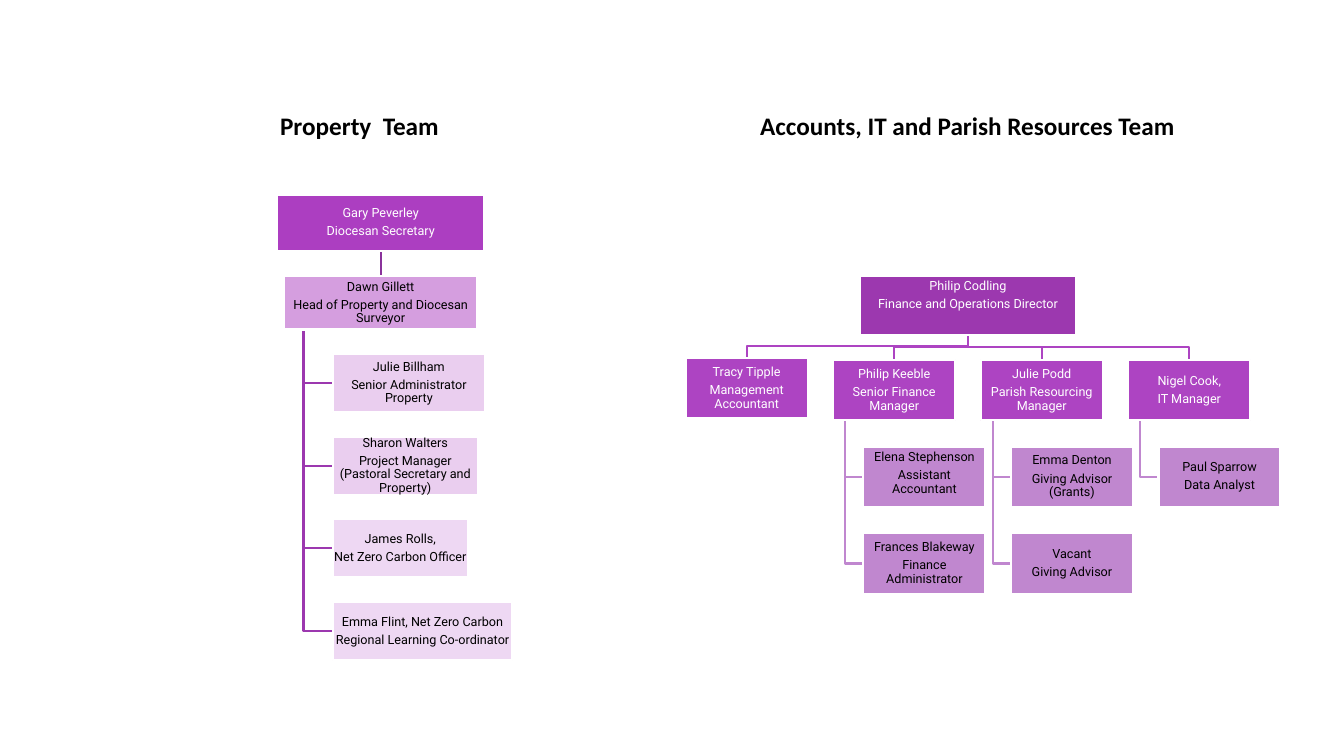
from dataclasses import dataclass
from typing import Optional

from lxml import etree
from pptx import Presentation
from pptx import util as u
from pptx.dml.color import RGBColor
from pptx.enum import shapes, text
from pptx.oxml.ns import qn

BLACK = RGBColor(0x00, 0x00, 0x00)
WHITE = RGBColor(0xFF, 0xFF, 0xFF)
PURPLE = RGBColor(0xAC, 0x3E, 0xC1)
DEEP_PURPLE = RGBColor(0x9C, 0x38, 0xAF)
DARK_PURPLE = RGBColor(0x8A, 0x32, 0x9B)
MANAGER_PURPLE = RGBColor(0xAD, 0x44, 0xC2)
SOFT_PURPLE = RGBColor(0xC0, 0x87, 0xCF)
PALE_PURPLE = RGBColor(0xEE, 0xD8, 0xF3)

LINE_WIDTH = u.Pt(1.5)
MARGIN = 0.01
HANGER_SHARE = 0.1  # where a hanging line leaves its parent, as a share of the parent's width

Point = tuple[float, float]


@dataclass(frozen=True)
class Grid:
    left: float
    top: float
    column: float
    row: float

    def at(self, column: float, row: float) -> Point:
        return self.left + column * self.column, self.top + row * self.row


@dataclass(frozen=True)
class Box:
    corner: Point
    width: float
    height: float
    lines: tuple[str, ...]
    fill: RGBColor
    ink: RGBColor = BLACK
    opacity: int = 100
    lift: float = 0  # extra space kept free under the text

    @property
    def bottom(self) -> float:
        return self.corner[1] + self.height

    @property
    def centre(self) -> Point:
        return self.corner[0] + self.width / 2, self.corner[1] + self.height / 2


@dataclass(frozen=True)
class Heading:
    left: float
    words: str


PROPERTY = Grid(left=3.3, top=3.51, column=1, row=0.82)
ACCOUNTS = Grid(left=6.8, top=3.57, column=4.39 / 3, row=0.86)
INDENT = 0.3 / ACCOUNTS.column

HEADINGS = (Heading(6.25, "Accounts, IT and Parish Resources Team"),
            Heading(0.22, "Property  Team"))

SECRETARY = Box((2.75, 1.93), 2.05, 0.56, ("Gary Peverley", "Diocesan Secretary"), PURPLE, WHITE)
SURVEYOR = Box((2.82, 2.74), 1.91, 0.53,
               ("Dawn Gillett", "Head of Property and Diocesan Surveyor"), PURPLE, opacity=50)
DIRECTOR = Box((8.53, 2.74), 2.14, 0.58,
               ("Philip Codling", "Finance and Operations Director"),
               DEEP_PURPLE, WHITE, lift=0.19)


def property_member(row: int, width: float, lines: tuple[str, ...],
                    fill: RGBColor, opacity: int = 100) -> Box:
    return Box(PROPERTY.at(0, row), width, 0.58, lines, fill, opacity=opacity)


def manager(column: int, *lines: str, raised: float = 0) -> Box:
    return Box(ACCOUNTS.at(column, -raised), 1.21, 0.6, lines, MANAGER_PURPLE, WHITE)


def report(column: int, row: int, *lines: str, lift: float = 0) -> Box:
    return Box(ACCOUNTS.at(column + INDENT, row), 1.21, 0.6, lines, SOFT_PURPLE, lift=lift)


PROPERTY_MEMBERS = (
    property_member(0, 1.51, ("Julie Billham", "Senior Administrator Property"), PURPLE, 25),
    property_member(1, 1.44, ("Sharon Walters",
                              "Project Manager (Pastoral Secretary and Property)"), PURPLE, 25),
    property_member(2, 1.34, ("James Rolls,", "Net Zero Carbon Officer"), PALE_PURPLE),
    property_member(3, 1.78, ("Emma Flint, Net Zero Carbon",
                              "Regional Learning Co-ordinator"), PALE_PURPLE),
)
ACCOUNTS_TEAMS = (
    (manager(0, "Tracy Tipple", "Management Accountant", raised=0.02), ()),
    (manager(1, "Philip Keeble", "Senior Finance Manager"),
     (report(1, 1, "Elena Stephenson", "Assistant Accountant", lift=0.06),
      report(1, 2, "Frances Blakeway", "Finance Administrator"))),
    (manager(2, "Julie Podd", "Parish Resourcing Manager"),
     (report(2, 1, "Emma Denton", "Giving Advisor (Grants)"),
      report(2, 2, "Vacant", "Giving Advisor"))),
    (manager(3, "Nigel Cook,", "IT Manager"),
     (report(3, 1, "Paul Sparrow", "Data Analyst"),)),
)


def draw_polyline(slide, points: list[Point], colour: RGBColor) -> None:
    start, *rest = [(u.Inches(x), u.Inches(y)) for x, y in points]
    builder = slide.shapes.build_freeform(*start)
    builder.add_line_segments(rest, close=False)
    shape = builder.convert_to_shape()
    shape.shadow.inherit = False
    shape.fill.background()
    shape.line.color.rgb = colour
    shape.line.width = LINE_WIDTH


def draw_hanger(slide, parent: Box, child: Box, colour: RGBColor) -> None:
    """Line down from the parent's left part, then across to the child's left side."""
    trunk = parent.corner[0] + HANGER_SHARE * parent.width
    middle = child.centre[1]
    draw_polyline(slide, [(trunk, parent.bottom), (trunk, middle), (child.corner[0], middle)],
                  colour)


def draw_branch(slide, parent: Box, child: Box, colour: RGBColor) -> None:
    """Line from the parent's bottom to the child's top, turning half way."""
    start, end, top = parent.centre[0], child.centre[0], child.corner[1]
    turn = (parent.bottom + top) / 2
    draw_polyline(slide, [(start, parent.bottom), (start, turn), (end, turn), (end, top)], colour)


def draw_box(slide, box: Box):
    shape = slide.shapes.add_shape(
        shapes.MSO_SHAPE.RECTANGLE, *map(u.Inches, (*box.corner, box.width, box.height)))
    shape.shadow.inherit = False
    shape.fill.solid()
    shape.fill.fore_color.rgb = box.fill
    if box.opacity < 100:
        colour = shape.fill._xPr.find(qn("a:solidFill"))[0]
        etree.SubElement(colour, qn("a:alpha"), val=str(box.opacity * 1000))
    shape.line.color.rgb = WHITE
    shape.line.width = LINE_WIDTH

    frame = shape.text_frame
    frame.word_wrap = True
    frame.vertical_anchor = text.MSO_ANCHOR.MIDDLE
    frame.margin_left = frame.margin_right = frame.margin_top = u.Inches(MARGIN)
    frame.margin_bottom = u.Inches(MARGIN + box.lift)
    for index, line in enumerate(box.lines):
        paragraph = frame.add_paragraph() if index else frame.paragraphs[0]
        paragraph.line_spacing = 0.9
        paragraph.space_after = u.Pt(3.15)
        add_run(paragraph, line, "Roboto", 9, box.ink)
    return shape


def add_run(paragraph, words: str, font: str, size: float, colour: RGBColor,
            bold: Optional[bool] = None) -> None:
    paragraph.alignment = text.PP_ALIGN.CENTER
    run = paragraph.add_run()
    run.text = words
    run.font.name = font
    run.font.size = u.Pt(size)
    run.font.bold = bold
    run.font.color.rgb = colour


def draw_heading(slide, heading: Heading) -> None:
    box = slide.shapes.add_textbox(*map(u.Inches, (heading.left, 1.05, 6.69, 0.4)))
    box.text_frame.word_wrap = True
    add_run(box.text_frame.paragraphs[0], heading.words, "Calibri", 18, BLACK, bold=True)


def draw_property_team(slide) -> None:
    for member in reversed(PROPERTY_MEMBERS):
        draw_hanger(slide, SURVEYOR, member, DEEP_PURPLE)
    link = slide.shapes.add_connector(shapes.MSO_CONNECTOR.STRAIGHT, 0, 0, 0, 0)
    link.line.color.rgb = DARK_PURPLE
    link.line.width = LINE_WIDTH
    etree.SubElement(link._element.spPr, qn("a:effectLst"))
    link.begin_connect(draw_box(slide, SECRETARY), 2)
    link.end_connect(draw_box(slide, SURVEYOR), 0)
    for member in PROPERTY_MEMBERS:
        draw_box(slide, member)


def draw_accounts_team(slide) -> None:
    for lead, reports in reversed(ACCOUNTS_TEAMS):
        for member in reversed(reports):
            draw_hanger(slide, lead, member, SOFT_PURPLE)
        draw_branch(slide, DIRECTOR, lead, MANAGER_PURPLE)
    draw_box(slide, DIRECTOR)
    for lead, reports in ACCOUNTS_TEAMS:
        for member in (lead, *reports):
            draw_box(slide, member)


def main() -> None:
    presentation = Presentation()
    presentation.slide_width = u.Inches(13.33)
    presentation.slide_height = u.Inches(7.5)
    slide = presentation.slides.add_slide(presentation.slide_layouts[6])
    for heading in HEADINGS:
        draw_heading(slide, heading)
    draw_property_team(slide)
    draw_accounts_team(slide)
    presentation.save("out.pptx")


if __name__ == "__main__":
    main()
